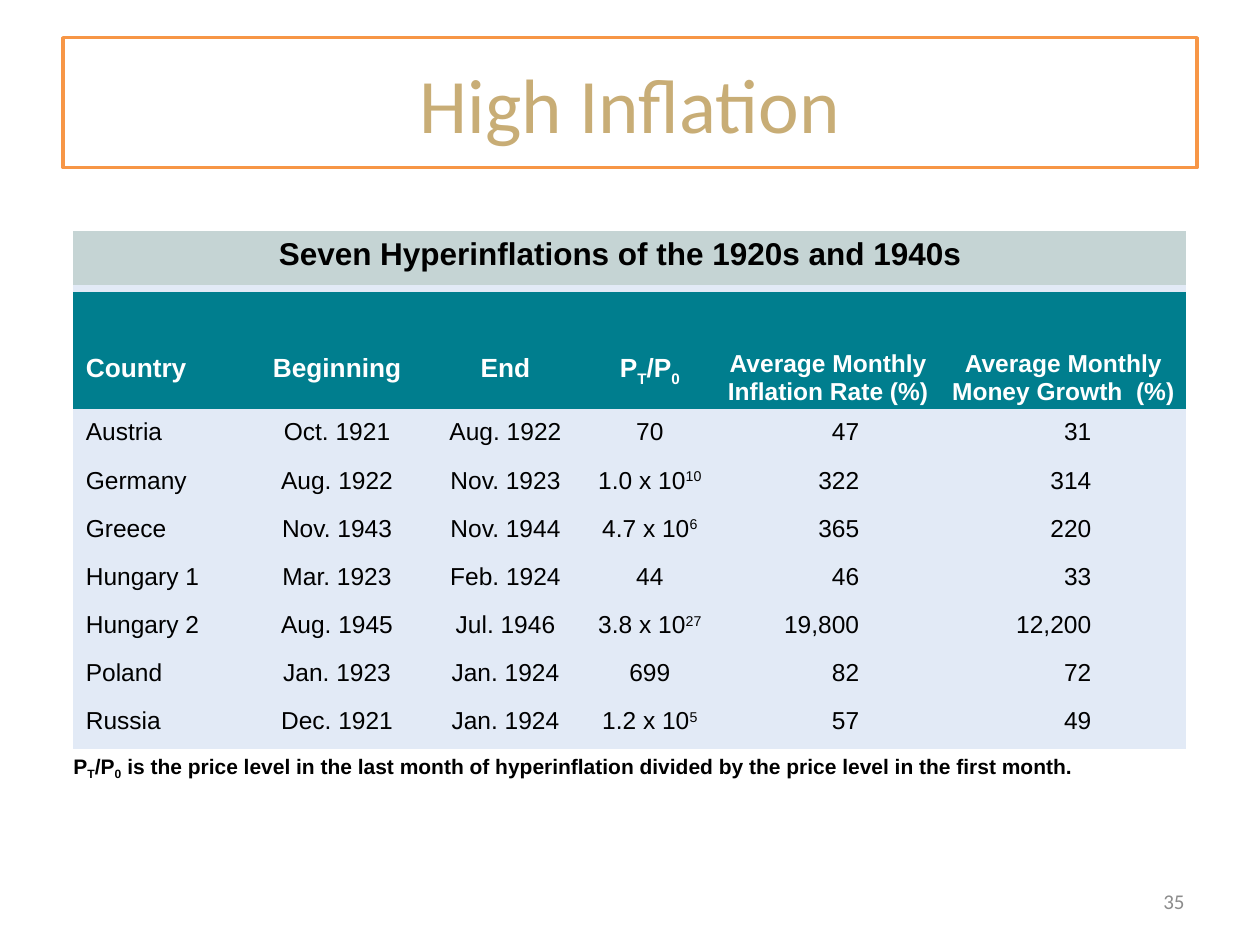
from lxml.etree import SubElement
from pptx import Presentation
from pptx.dml.color import RGBColor
from pptx.enum.shapes import MSO_SHAPE as Shape
from pptx.enum.text import MSO_ANCHOR as Anchor, PP_ALIGN as Align
from pptx.oxml.ns import qn
from pptx.util import Cm, Pt

WHITE = RGBColor(0xFF, 0xFF, 0xFF)
BLACK = RGBColor(0x00, 0x00, 0x00)
ORANGE = RGBColor(0xF7, 0x96, 0x46)
GOLD = RGBColor(0xC8, 0xAD, 0x76)
GREY = RGBColor(0x8C, 0x8C, 0x8C)
SAGE = RGBColor(0xC5, 0xD4, 0xD4)
TEAL = RGBColor(0x00, 0x7E, 0x8E)
PALE = RGBColor(0xE2, 0xEA, 0xF6)

PLAIN_TABLE = "{2D5ABB26-0587-4C30-8999-92F81FD0307C}"
SUBSCRIPT, SUPERSCRIPT, NOTE_SUBSCRIPT = -25000, 30000, -18000

# Width, left inset, right inset (cm) and body alignment of each column
COLUMNS = [
    (3.89, 0.25, 0, Align.LEFT),
    (3.23, 0, 0.38, Align.CENTER),
    (3.18, 0, 0, Align.CENTER),
    (2.64, 0, 0, Align.CENTER),
    (4.55, 0, 1.65, Align.RIGHT),
    (4.93, 0, 1.9, Align.RIGHT),
]
HEADERS = ["Country", "Beginning", "End", "P|T|/P|0|",
           "Average Monthly Inflation Rate (%)", "Average Monthly Money Growth  (%)"]
EPISODES = [
    ("Austria", "Oct. 1921", "Aug. 1922", "70", "47", "31"),
    ("Germany", "Aug. 1922", "Nov. 1923", "1.0 x 10|10|", "322", "314"),
    ("Greece", "Nov. 1943", "Nov. 1944", "4.7 x 10|6|", "365", "220"),
    ("Hungary 1", "Mar. 1923", "Feb. 1924", "44", "46", "33"),
    ("Hungary 2", "Aug. 1945", "Jul. 1946", "3.8 x 10|27|", "19,800", "12,200"),
    ("Poland", "Jan. 1923", "Jan. 1924", "699", "82", "72"),
    ("Russia", "Dec. 1921", "Jan. 1924", "1.2 x 10|5|", "57", "49"),
]
ROW_HEIGHTS = [1.17, 2.49] + [0.97] * len(EPISODES) + [0.95]
NOTE = ("P|T|/P|0| is the price level in the last month of hyperinflation "
        "divided by the price level in the first month.")


def write(frame, text, font="Arial", size=14, color=BLACK, bold=False,
          align=Align.LEFT, shift=SUPERSCRIPT):
    """Fill a text frame; pieces between bars are raised or lowered by shift."""
    para = frame.paragraphs[0]
    para.alignment = align
    for index, piece in enumerate(text.split("|")):
        if not piece:
            continue
        span = para.add_run()
        span.text = piece
        span.font.name = font
        span.font.size = Pt(size)
        span.font.bold = bold
        span.font.color.rgb = color
        if index % 2:
            span.font._element.set("baseline", str(shift))


def draw_border(cell, side, color, width):
    """Add a line to one side of a cell: T or B."""
    line = cell._tc.get_or_add_tcPr()
    border = SubElement(line, qn(f"a:ln{side}"), w=str(Pt(width)))
    line.insert(0, border)
    fill = SubElement(border, qn("a:solidFill"))
    SubElement(fill, qn("a:srgbClr"), val=str(color))


class SlideBuilder:
    font = "Calibri"

    def __init__(self, deck):
        self.page = deck.slides.add_slide(deck.slide_layouts[6])

    def title(self, text, left, top, width, height):
        box = self.page.shapes.add_shape(
            Shape.RECTANGLE, Cm(left), Cm(top), Cm(width), Cm(height))
        box.shadow.inherit = False
        box.fill.solid()
        box.fill.fore_color.rgb = WHITE
        box.line.color.rgb = ORANGE
        box.line.width = Pt(2)
        box.text_frame.vertical_anchor = Anchor.MIDDLE
        write(box.text_frame, text, font=self.font, size=44, color=GOLD,
              align=Align.CENTER)

    def page_number(self, text, left, top, width, height):
        box = self.page.shapes.add_textbox(Cm(left), Cm(top), Cm(width), Cm(height))
        box.text_frame.word_wrap = True
        box.text_frame.vertical_anchor = Anchor.MIDDLE
        write(box.text_frame, text, font=self.font, size=12, color=GREY,
              align=Align.RIGHT)

    def table(self, left, top):
        widths = [column[0] for column in COLUMNS]
        table = self.page.shapes.add_table(
            len(ROW_HEIGHTS), len(widths), Cm(left), Cm(top),
            Cm(sum(widths)), Cm(sum(ROW_HEIGHTS))).table
        table.first_row = table.horz_banding = False
        table._tbl.tblPr.find(qn("a:tableStyleId")).text = PLAIN_TABLE
        for column, width in zip(table.columns, widths):
            column.width = Cm(width)
        for row, height in zip(table.rows, ROW_HEIGHTS):
            row.height = Cm(height)
        return table

    def cell(self, cell, text, fill=None, left=0.25, right=0.25, top=0.13,
             anchor=Anchor.TOP, **style):
        cell.margin_left, cell.margin_right = Cm(left), Cm(right)
        cell.margin_top, cell.margin_bottom = Cm(top), Cm(0.13)
        cell.vertical_anchor = anchor
        if fill is None:
            cell.fill.background()
        else:
            cell.fill.solid()
            cell.fill.fore_color.rgb = fill
        write(cell.text_frame, text, **style)


def fill_table(slide, table):
    last_row, last_column = len(ROW_HEIGHTS) - 1, len(COLUMNS) - 1

    table.cell(0, 1).merge(table.cell(0, last_column))
    captions = ["", "Seven Hyperinflations of the 1920s and 1940s"]
    captions += [""] * (len(COLUMNS) - len(captions))
    for column, caption in enumerate(captions):
        cell = table.cell(0, column)
        slide.cell(cell, caption, fill=SAGE, size=18, bold=True)
        draw_border(cell, "B", PALE, 4.5)

    for column, (header, (_, left, right, align)) in enumerate(zip(HEADERS, COLUMNS)):
        cell = table.cell(1, column)
        if align == Align.RIGHT:
            layout = dict(left=0, right=0, size=14, anchor=Anchor.BOTTOM,
                          align=Align.CENTER)
        else:
            layout = dict(left=left, right=right, size=15, top=1.32, align=align)
        slide.cell(cell, header, fill=TEAL, color=WHITE, bold=True,
                   shift=SUBSCRIPT, **layout)
        draw_border(cell, "T", PALE, 4.5)

    for row, episode in enumerate(EPISODES, start=2):
        for column, (value, (_, left, right, align)) in enumerate(zip(episode, COLUMNS)):
            slide.cell(table.cell(row, column), value, fill=PALE,
                       left=left, right=right, align=align)

    note = table.cell(last_row, 0)
    note.merge(table.cell(last_row, last_column))
    slide.cell(note, NOTE, left=0, right=0, size=12, bold=True, shift=NOTE_SUBSCRIPT)


def main():
    deck = Presentation()
    deck.slide_width, deck.slide_height = Cm(25.4), Cm(19.05)
    slide = SlideBuilder(deck)
    slide.title("High Inflation", 1.27, 0.76, 22.86, 2.62)
    fill_table(slide, slide.table(1.48, 4.65))
    slide.page_number("35", 18.2, 17.66, 5.93, 1.01)
    deck.save("out.pptx")


if __name__ == "__main__":
    main()
